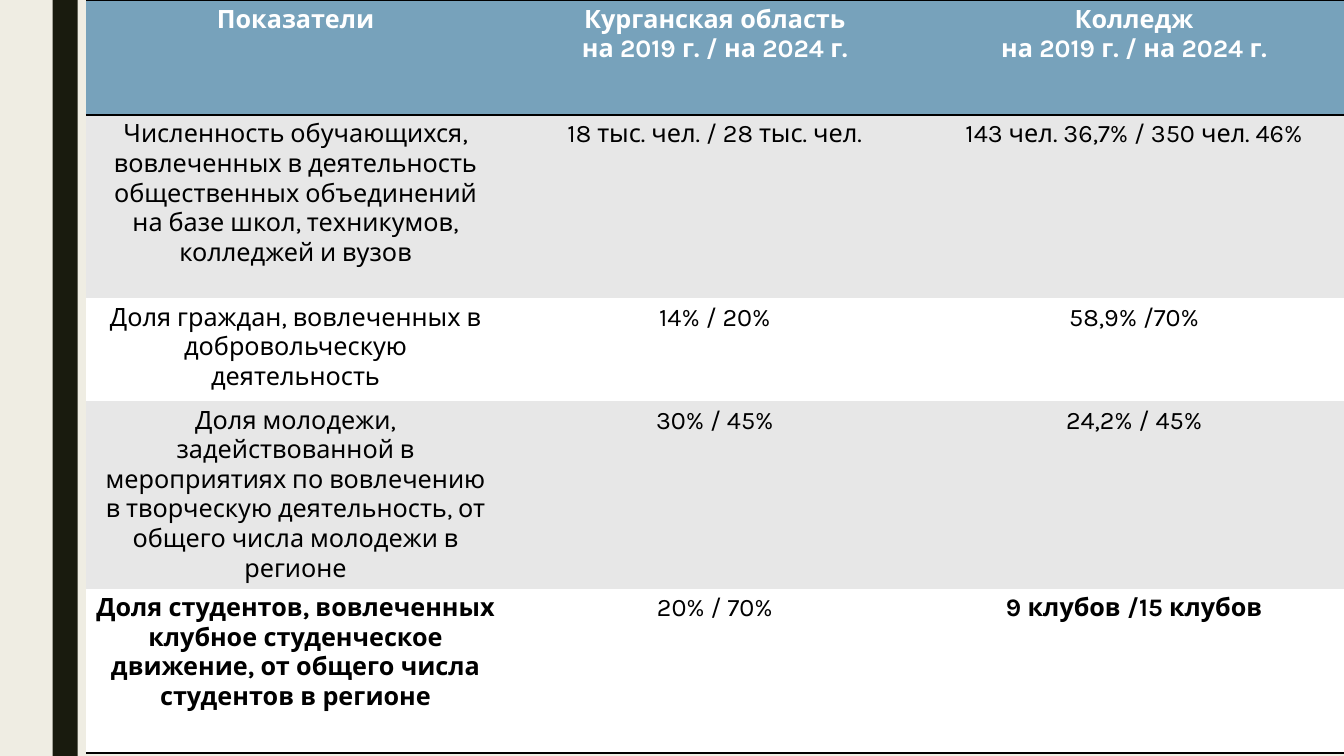
from lxml.etree import SubElement
from pptx import Presentation
from pptx.dml.color import RGBColor
from pptx.enum.shapes import MSO_SHAPE as Shape
from pptx.enum.text import PP_ALIGN as Align
from pptx.oxml.ns import qn
from pptx.util import Pt

PAGE_WIDTH, PAGE_HEIGHT = 960, 540
COLUMN_WIDTH = 299.5
TABLE_LEFT = 61.4
ROW_HEIGHTS = [82, 131, 73.5, 131, 117.5]
ROWS = [
    ["Показатели", "Курганская область\nна 2019 г. / на 2024 г.",
     "Колледж\nна 2019 г. / на 2024 г."],
    ["Численность обучающихся, вовлеченных в деятельность общественных "
     "объединений на базе школ, техникумов, колледжей и вузов",
     "18 тыс. чел. / 28 тыс. чел.", "143 чел. 36,7% / 350 чел. 46%"],
    ["Доля граждан, вовлеченных в добровольческую\nдеятельность",
     "14% / 20%", "58,9% /70%"],
    ["Доля молодежи, задействованной в мероприятиях по вовлечению в творческую "
     "деятельность, от общего числа молодежи в регионе",
     "30% / 45%", "24,2% / 45%"],
    ["Доля студентов, вовлеченных клубное студенческое\n"
     "движение, от общего числа студентов в регионе",
     "20% / 70%", "9 клубов /15 клубов"],
]
LAST_ROW = len(ROWS) - 1
BOLD_CELLS = {(0, 0), (0, 1), (0, 2), (LAST_ROW, 0), (LAST_ROW, 2)}


def color(code):
    return RGBColor.from_string(code)


class Page:
    font = "Karla"
    size = 18
    ink = "000000"
    light = "FFFFFF"
    band = "E7E7E7"
    header = "77A2BB"

    def __init__(self, deck, background):
        self.slide = deck.slides.add_slide(deck.slide_layouts[6])
        fill = self.slide.background.fill
        fill.solid()
        fill.fore_color.rgb = color(background)

    def bar(self, left, top, width, height, fill):
        box = self.slide.shapes.add_shape(
            Shape.RECTANGLE, Pt(left), Pt(top), Pt(width), Pt(height))
        box.shadow.inherit = False
        box.fill.solid()
        box.fill.fore_color.rgb = color(fill)
        box.line.fill.background()

    def table(self, left, top, column_width, heights, rows, bold_cells):
        columns = len(rows[0])
        table = self.slide.shapes.add_table(
            len(rows), columns, Pt(left), Pt(top),
            Pt(column_width * columns), Pt(sum(heights))).table
        for column in table.columns:
            column.width = Pt(column_width)
        for r, (height, texts) in enumerate(zip(heights, rows)):
            table.rows[r].height = Pt(height)
            fill = self.header if r == 0 else self.band if r % 2 else self.light
            ruled = {0: ("lnT", "lnB"), len(rows) - 1: ("lnB",)}.get(r, ())
            for c, text in enumerate(texts):
                cell = table.cell(r, c)
                self.cell_text(cell, text, self.ink if r else self.light,
                               (r, c) in bold_cells)
                cell.fill.solid()
                cell.fill.fore_color.rgb = color(fill)
                self.cell_borders(cell, ruled)

    def cell_text(self, cell, text, ink, bold):
        cell.text = text
        for para in cell.text_frame.paragraphs:
            para.alignment = Align.CENTER
            para.font.name = self.font
            para.font.size = Pt(self.size)
            para.font.bold = bold
            para.font.color.rgb = color(ink)

    def cell_borders(self, cell, ruled):
        """Rule the named sides and leave the others without a line."""
        properties = cell._tc.get_or_add_tcPr()
        for index, side in enumerate(("lnL", "lnR", "lnT", "lnB")):
            line = SubElement(properties, qn(f"a:{side}"))
            if side in ruled:
                line.set("w", str(Pt(2)))
                paint = SubElement(line, qn("a:solidFill"))
                SubElement(paint, qn("a:srgbClr")).set("val", self.ink)
            else:
                SubElement(line, qn("a:noFill"))
            properties.insert(index, line)


def main():
    deck = Presentation()
    deck.slide_width, deck.slide_height = Pt(PAGE_WIDTH), Pt(PAGE_HEIGHT)
    page = Page(deck, "EFEDE3")
    page.bar(37.5, 0, 18, PAGE_HEIGHT, "191B0E")
    page.table(TABLE_LEFT, 0, COLUMN_WIDTH, ROW_HEIGHTS, ROWS, BOLD_CELLS)
    deck.save("out.pptx")


if __name__ == "__main__":
    main()
